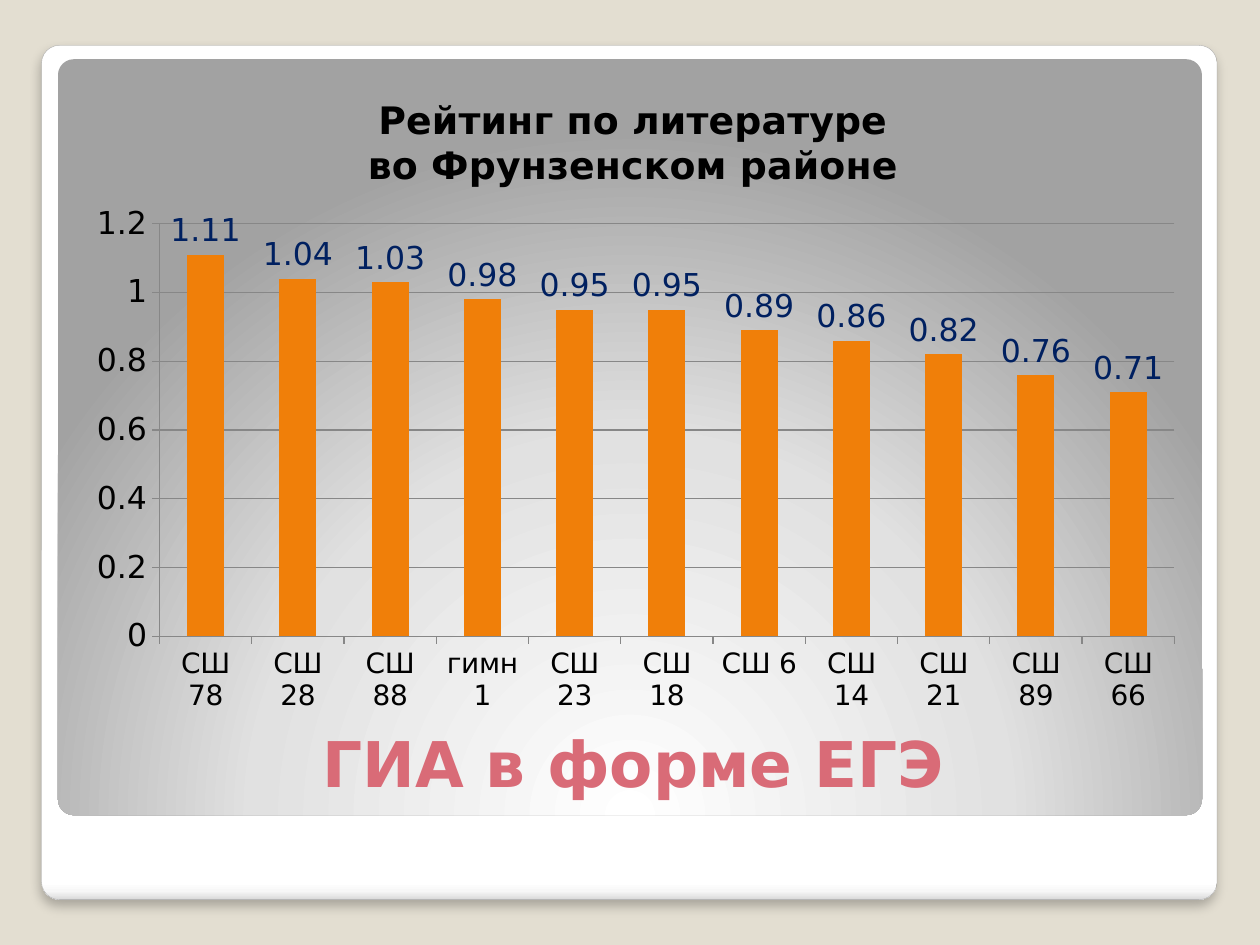
from lxml import etree
from pptx import Presentation
from pptx.chart.data import CategoryChartData
from pptx.dml.color import RGBColor
from pptx.enum.chart import XL_CHART_TYPE, XL_LABEL_POSITION, XL_TICK_MARK
from pptx.enum.shapes import MSO_SHAPE
from pptx.enum.text import MSO_ANCHOR, PP_ALIGN
from pptx.oxml import parse_xml
from pptx.oxml.ns import nsdecls, qn
from pptx.util import Inches, Pt

COLUMN = XL_CHART_TYPE.COLUMN_CLUSTERED
ABOVE = XL_LABEL_POSITION.OUTSIDE_END
OUT = XL_TICK_MARK.OUTSIDE
ROUND = MSO_SHAPE.ROUNDED_RECTANGLE
BOTTOM = MSO_ANCHOR.BOTTOM
CENTER = PP_ALIGN.CENTER

FONT = "DejaVu Sans"
COLORS = {
    "back": "E3DED1",
    "edge": "A4A4A4",
    "title": "D96B77",
    "text": "000000",
    "bar": "F07F09",
    "label": "002060",
    "grid": "878787",
}
FRAME = [(0, "FFFFFF"), (98, "FFFFFF"), (99, "F7F7F7"), (100, "DADADA")]
GLOW = [(0, "FFFFFF"), (55, "E1E1E1"), (100, "A2A2A2")]
DOWN = '<a:lin ang="5400000" scaled="0"/>'
RADIAL = ('<a:path path="circle"><a:fillToRect l="50000" t="175000" '
          'r="50000" b="-75000"/></a:path>')
SCORES = {
    "СШ 78": 1.11, "СШ 28": 1.04, "СШ 88": 1.03, "гимн 1": 0.98,
    "СШ 23": 0.95, "СШ 18": 0.95, "СШ 6": 0.89, "СШ 14": 0.86,
    "СШ 21": 0.82, "СШ 89": 0.76, "СШ 66": 0.71,
}


def color(name):
    return RGBColor.from_string(COLORS[name])


def style(font, size, name="text", bold=False):
    font.name = FONT
    font.size = Pt(size)
    font.bold = bold
    font.color.rgb = color(name)


def add_card(slide, box, stops, shade):
    card = slide.shapes.add_shape(ROUND, *map(Inches, box))
    card.adjustments[0] = 0.021
    card.shadow.inherit = False
    marks = "".join(
        f'<a:gs pos="{pos * 1000}"><a:srgbClr val="{tone}"/></a:gs>'
        for pos, tone in stops)
    fill = parse_xml(f'<a:gradFill {nsdecls("a")} rotWithShape="1">'
                     f'<a:gsLst>{marks}</a:gsLst>{shade}</a:gradFill>')
    card.element.spPr.insert(2, fill)
    card.line.fill.background()
    return card


def add_frame(slide, box):
    card = add_card(slide, box, FRAME, DOWN)
    card.line.color.rgb = color("edge")
    card.line.width = Pt(0.16)
    card.element.spPr.find(qn("a:effectLst")).append(parse_xml(
        f'<a:outerShdw {nsdecls("a")} blurRad="{Pt(6)}" dist="{Pt(4)}" '
        'dir="5400000" algn="t" rotWithShape="0"><a:srgbClr val="000000">'
        '<a:alpha val="25000"/></a:srgbClr></a:outerShdw>'))


def set_title(slide, box):
    title = slide.shapes.title
    title.left, title.top, title.width, title.height = map(Inches, box)
    title.element.getparent().append(title.element)
    frame = title.text_frame
    frame.text = "ГИА в форме ЕГЭ"
    frame.vertical_anchor = BOTTOM
    para = frame.paragraphs[0]
    para.alignment = CENTER
    style(para.runs[0].font, 36, "title", True)


def set_plot(chart, box):
    plot = chart.element.chart.plotArea
    for old in plot.findall(qn("c:layout")):
        plot.remove(old)
    layout = parse_xml(f'<c:layout {nsdecls("c")}><c:manualLayout/></c:layout>')
    parts = [("layoutTarget", "inner"), ("xMode", "edge"), ("yMode", "edge")]
    for tag, val in parts + list(zip("xywh", box)):
        etree.SubElement(layout[0], qn(f"c:{tag}")).set("val", str(val))
    plot.insert(0, layout)


def add_rating(slide, box):
    data = CategoryChartData()
    data.categories = list(SCORES)
    data.add_series("Series 1", list(SCORES.values()))
    chart = slide.shapes.add_chart(COLUMN, *map(Inches, box), data).chart
    style(chart.font, 18)
    chart.has_legend = False

    chart.has_title = True
    frame = chart.chart_title.text_frame
    frame.text = "Рейтинг по литературе\nво Фрунзенском районе"
    for para in frame.paragraphs:
        style(para.runs[0].font, 21.6, bold=True)
    chart.chart_title.include_in_layout = False

    for axis, size in ((chart.category_axis, 16), (chart.value_axis, 18)):
        axis.major_tick_mark = OUT
        axis.format.line.color.rgb = color("grid")
        style(axis.tick_labels.font, size)
    rows = chart.value_axis
    rows.minimum_scale, rows.maximum_scale, rows.major_unit = 0, 1.2, 0.2
    rows.has_major_gridlines = True
    rows.major_gridlines.format.line.color.rgb = color("grid")

    plot = chart.plots[0]
    plot.gap_width = 150
    plot.vary_by_categories = False
    fill = plot.series[0].format.fill
    fill.solid()
    fill.fore_color.rgb = color("bar")
    labels = plot.series[0].data_labels
    labels.show_value = True
    labels.position = ABOVE
    style(labels.font, 18, "label")
    set_plot(chart, (0.08, 0.23, 0.9, 0.63))


def main():
    deck = Presentation()
    deck.slide_width, deck.slide_height = Inches(10), Inches(7.5)
    slide = deck.slides.add_slide(deck.slide_layouts[5])
    back = slide.background.fill
    back.solid()
    back.fore_color.rgb = color("back")
    add_frame(slide, (0.33, 0.36, 9.33, 6.78))
    add_card(slide, (0.46, 0.47, 9.08, 6), GLOW, RADIAL)
    set_title(slide, (0.55, 5.23, 8.95, 1.17))
    add_rating(slide, (0.55, 0.58, 8.95, 5.2))
    deck.save("out.pptx")


if __name__ == "__main__":
    main()
